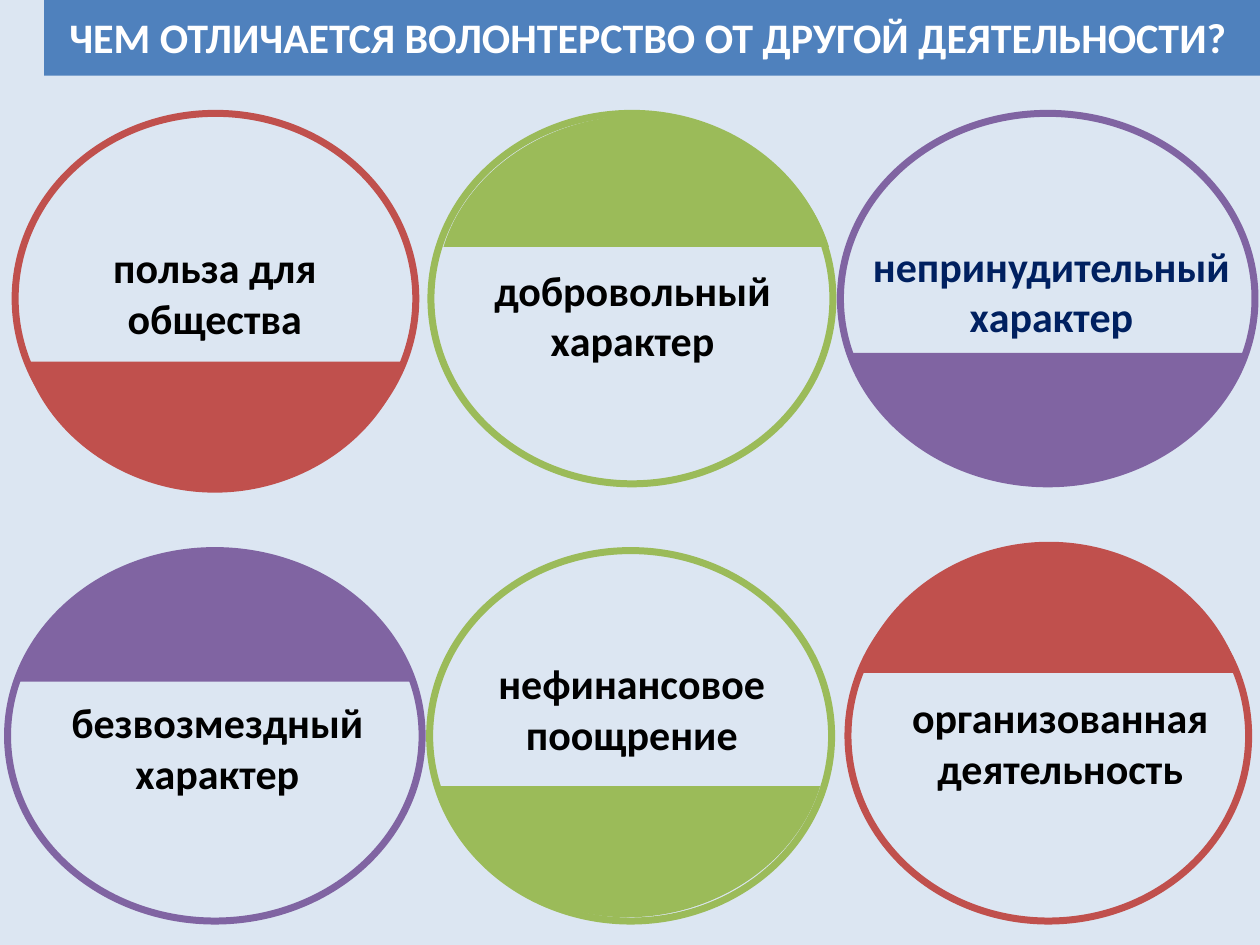
from dataclasses import dataclass

from lxml.etree import SubElement
from pptx import Presentation
from pptx.dml.color import RGBColor
from pptx.enum.shapes import MSO_SHAPE
from pptx.enum.text import MSO_ANCHOR, MSO_AUTO_SIZE, PP_ALIGN
from pptx.oxml.ns import qn
from pptx.shapes.autoshape import Shape
from pptx.slide import Slide
from pptx.util import Inches, Pt

BACKGROUND = RGBColor(0xDC, 0xE6, 0xF2)
BLUE = RGBColor(0x4F, 0x81, 0xBD)
RED = RGBColor(0xC0, 0x50, 0x4D)
GREEN = RGBColor(0x9B, 0xBB, 0x59)
PURPLE = RGBColor(0x80, 0x64, 0xA2)
NAVY = RGBColor(0x00, 0x20, 0x60)
BLACK = RGBColor(0x00, 0x00, 0x00)
WHITE = RGBColor(0xFF, 0xFF, 0xFF)

FONT = "Calibri"
FONT_SIZE = Pt(24)
TOP_ROW, BOTTOM_ROW = 0.9, 4.37
CIRCLE_HEIGHT = 2.94
CAP_HEIGHT = 1.04
LABEL_HEIGHT = 0.91
# Two Bézier curves of a cap, in units of its width and height
CAP_CURVE = [(0, 0), (0.06, 0.58), (0.27, 1), (0.5, 1),
             (0.73, 1), (0.94, 0.58), (1, 0)]


@dataclass
class Feature:
    """A ring with one filled cap and a label; lengths in inches."""
    text: str
    color: RGBColor
    left: float
    top: float
    width: float
    cap_left: float
    cap_base: float
    cap_width: float
    cap_up: bool
    label_left: float
    label_top: float
    label_width: float = 3.17
    text_color: RGBColor = BLACK


FEATURES = [
    Feature("польза для общества", RED, 0.12, TOP_ROW, 3.18,
            0.2, 2.87, 3.01, False, 0.12, 1.87),
    Feature("добровольный характер", GREEN, 3.42, TOP_ROW, 3.19,
            3.52, 1.96, 3.06, True, 3.64, 2.05, 2.76),
    Feature("непринудительный характер", PURPLE, 6.67, TOP_ROW, 3.29,
            6.73, 2.8, 3.15, False, 6.73, 1.86, 3.23, NAVY),
    Feature("организованная деятельность", RED, 6.73, BOTTOM_ROW, 3.18,
            6.82, 5.34, 3.01, True, 6.83, 5.44),
    Feature("нефинансовое поощрение", GREEN, 3.41, BOTTOM_ROW, 3.19,
            3.45, 6.24, 3.06, False, 3.43, 5.17),
    Feature("безвозмездный характер", PURPLE, 0.06, BOTTOM_ROW, 3.29,
            0.14, 5.41, 3.15, True, 0.14, 5.48),
]


def fill_plain(shape: Shape, color: RGBColor) -> None:
    shape.fill.solid()
    shape.fill.fore_color.rgb = color
    shape.line.fill.background()
    shape.shadow.inherit = False


def format_text(shape: Shape, color: RGBColor, alignment: PP_ALIGN) -> None:
    paragraph = shape.text_frame.paragraphs[0]
    paragraph.alignment = alignment
    paragraph.font.name = FONT
    paragraph.font.size = FONT_SIZE
    paragraph.font.bold = True
    paragraph.font.color.rgb = color


def curve_segments(shape: Shape) -> None:
    """Join each three line segments of a freeform into one Bézier curve."""
    segments = list(shape._element.iter(qn("a:lnTo")))
    for start in range(0, len(segments) - 2, 3):
        group = segments[start:start + 3]
        outline = group[0].getparent()
        curve = SubElement(outline, qn("a:cubicBezTo"))
        group[0].addprevious(curve)
        for segment in group:
            curve.append(segment[0])
            outline.remove(segment)


def draw_ring(slide: Slide, feature: Feature) -> None:
    ring = slide.shapes.add_shape(
        MSO_SHAPE.OVAL, Inches(feature.left), Inches(feature.top),
        Inches(feature.width), Inches(CIRCLE_HEIGHT))
    ring.fill.background()
    ring.line.color.rgb = feature.color
    ring.line.width = Pt(4)
    ring.shadow.inherit = False


def draw_cap(slide: Slide, feature: Feature) -> None:
    direction = -1 if feature.cap_up else 1
    points = [(Inches(feature.cap_left + x * feature.cap_width),
               Inches(feature.cap_base + direction * y * CAP_HEIGHT))
              for x, y in CAP_CURVE]
    builder = slide.shapes.build_freeform(*points[0])
    builder.add_line_segments(points[1:], close=True)
    cap = builder.convert_to_shape()
    curve_segments(cap)
    fill_plain(cap, feature.color)


def draw_label(slide: Slide, feature: Feature) -> None:
    label = slide.shapes.add_textbox(
        Inches(feature.label_left), Inches(feature.label_top),
        Inches(feature.label_width), Inches(LABEL_HEIGHT))
    label.text_frame.word_wrap = True
    label.text_frame.auto_size = MSO_AUTO_SIZE.SHAPE_TO_FIT_TEXT
    label.text_frame.text = feature.text
    format_text(label, feature.text_color, PP_ALIGN.CENTER)


def draw_heading(slide: Slide) -> None:
    bar = slide.shapes.add_shape(
        MSO_SHAPE.RECTANGLE, Inches(0.35), 0, Inches(9.65), Inches(0.6))
    fill_plain(bar, BLUE)

    title = slide.shapes.title
    title.left, title.top = Inches(0.45), Inches(0.04)
    title.width, title.height = Inches(9.47), Inches(0.5)
    title.text_frame.text = "ЧЕМ ОТЛИЧАЕТСЯ ВОЛОНТЕРСТВО ОТ ДРУГОЙ ДЕЯТЕЛЬНОСТИ?"
    title.text_frame.word_wrap = False
    title.text_frame.auto_size = MSO_AUTO_SIZE.SHAPE_TO_FIT_TEXT
    title.text_frame.vertical_anchor = MSO_ANCHOR.TOP
    format_text(title, WHITE, PP_ALIGN.LEFT)
    # The title stands in front of its bar
    bar._element.addnext(title._element)


def main() -> None:
    presentation = Presentation()
    presentation.slide_width = Inches(10)
    presentation.slide_height = Inches(7.5)
    slide = presentation.slides.add_slide(presentation.slide_layouts[5])
    slide.background.fill.solid()
    slide.background.fill.fore_color.rgb = BACKGROUND

    # Heading
    draw_heading(slide)

    # Six features in two rows
    for feature in FEATURES:
        draw_ring(slide, feature)
        draw_cap(slide, feature)
        draw_label(slide, feature)

    presentation.save("out.pptx")


if __name__ == "__main__":
    main()
